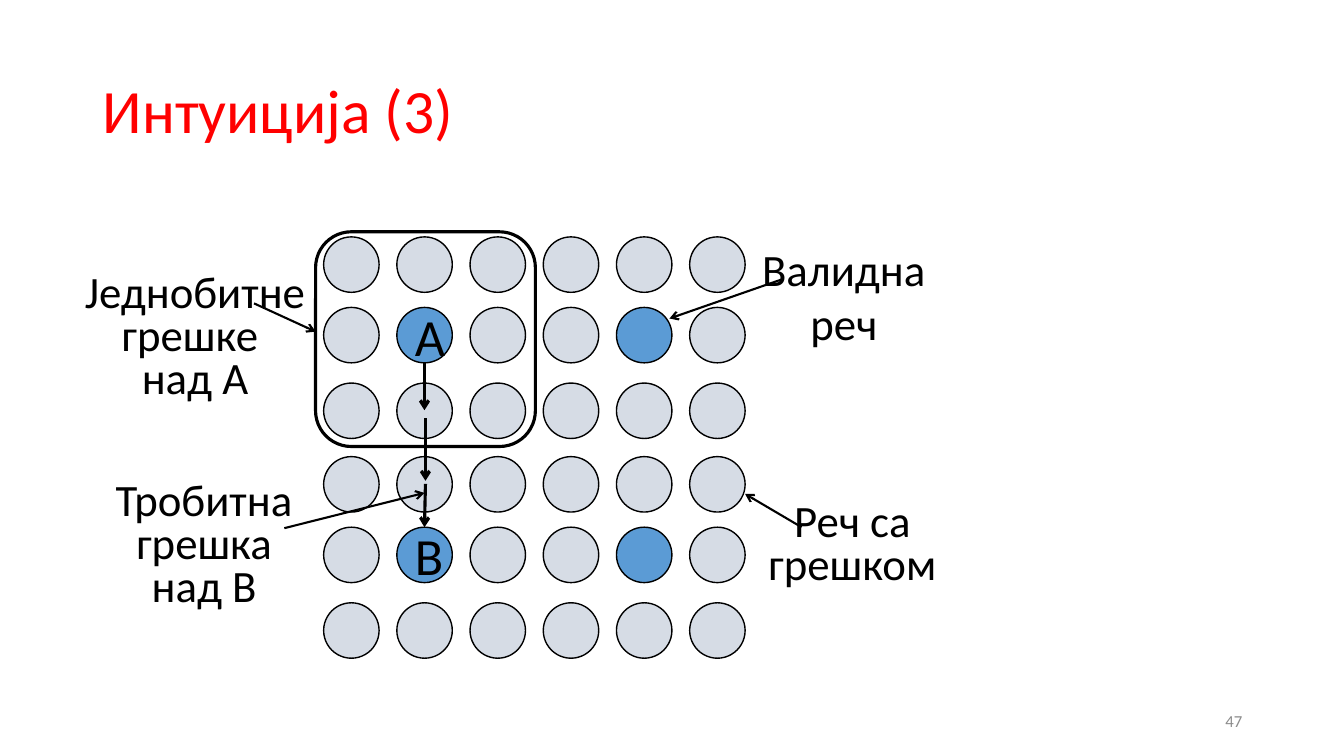
from lxml.etree import SubElement
from pptx import Presentation
from pptx.dml.color import RGBColor
from pptx.enum.shapes import MSO_CONNECTOR, MSO_SHAPE
from pptx.enum.text import MSO_ANCHOR, MSO_AUTO_SIZE, PP_ALIGN
from pptx.oxml.ns import qn
from pptx.util import Inches, Pt

COLORS = {
    "title": "FF0000",
    "ink": "000000",
    "number": "8C8C8C",
    "valid": "5B9BD5",
    "faulty": "D6DCE5",
}
GRID_COLUMNS, GRID_ROWS = 133.3, 75
DOT_SIZE = 5.5
DOT_LEFT, DOT_PITCH, DOT_COLUMNS = 32.1, 7.26, 6
BLOCK_TOP, BLOCK_PITCH, BLOCK_OFFSETS = 23.5, 21.8, (0, 7, 14.5)
VALID_WORDS = {(1, 1): "A", (1, 4): "", (4, 1): "B", (4, 4): ""}


class CodewordSlide:
    font_name = "Calibri"

    def __init__(self, presentation):
        self.column = presentation.slide_width / GRID_COLUMNS
        self.row = presentation.slide_height / GRID_ROWS
        self.slide = presentation.slides.add_slide(presentation.slide_layouts[6])

    def place(self, left, top, width, height):
        return (round(left * self.column), round(top * self.row),
                round(width * self.column), round(height * self.row))

    def color(self, name):
        return RGBColor.from_string(COLORS[name])

    def set_text(self, text_frame, text, size, color, align, spacing=1.0):
        paragraph = text_frame.paragraphs[0]
        paragraph.text = text
        paragraph.alignment = align
        paragraph.line_spacing = spacing
        for run in paragraph.runs:
            run.font.name = self.font_name
            run.font.size = Pt(size)
            run.font.color.rgb = self.color(color)

    def text(self, box, text, size, color, align, spacing=1.0):
        text_frame = self.slide.shapes.add_textbox(*self.place(*box)).text_frame
        text_frame.word_wrap = True
        text_frame.vertical_anchor = MSO_ANCHOR.MIDDLE
        self.set_text(text_frame, text, size, color, align, spacing)

    def label(self, box, text, spacing=0.8):
        text_frame = self.slide.shapes.add_textbox(*self.place(*box)).text_frame
        text_frame.word_wrap = False
        text_frame.auto_size = MSO_AUTO_SIZE.SHAPE_TO_FIT_TEXT
        self.set_text(text_frame, text, 32, "ink", PP_ALIGN.CENTER, spacing)

    def outlined(self, kind, box, line_width, fill=None):
        shape = self.slide.shapes.add_shape(kind, *self.place(*box))
        shape.shadow.inherit = False
        if fill:
            shape.fill.solid()
            shape.fill.fore_color.rgb = self.color(fill)
        else:
            shape.fill.background()
        shape.line.color.rgb = self.color("ink")
        shape.line.width = Pt(line_width)
        return shape

    def dot(self, left, top, fill, letter=""):
        shape = self.outlined(MSO_SHAPE.OVAL, (left, top, DOT_SIZE, DOT_SIZE), 1, fill)
        if letter:
            shape.text_frame.vertical_anchor = MSO_ANCHOR.MIDDLE
            self.set_text(shape.text_frame, letter, 37.3, "ink", PP_ALIGN.CENTER)

    def arrow(self, start, end, line_width):
        connector = self.slide.shapes.add_connector(
            MSO_CONNECTOR.STRAIGHT, *self.place(*start, *end))
        connector.line.color.rgb = self.color("ink")
        connector.line.width = Pt(line_width)
        properties = connector.element.spPr
        SubElement(properties.find(qn("a:ln")), qn("a:tailEnd"), type="arrow")
        SubElement(properties, qn("a:effectLst"))


def main():
    presentation = Presentation()
    presentation.slide_width = Inches(13.33)
    presentation.slide_height = Inches(7.5)
    page = CodewordSlide(presentation)

    page.text((94.2, 69.5, 30, 4), "47", 12, "number", PP_ALIGN.RIGHT)
    page.text((9.2, 4, 115, 14.5), "Интуиција (3)", 44, "title", PP_ALIGN.LEFT, 0.9)

    dot_tops = [BLOCK_TOP + block * BLOCK_PITCH + offset
                for block in range(2) for offset in BLOCK_OFFSETS]
    for row, top in enumerate(dot_tops):
        for column in range(DOT_COLUMNS):
            word = (row, column)
            fill = "valid" if word in VALID_WORDS else "faulty"
            page.dot(DOT_LEFT + column * DOT_PITCH, top, fill, VALID_WORDS.get(word, ""))

    page.outlined(MSO_SHAPE.ROUNDED_RECTANGLE, (31.3, 23, 21.8, 21.3), 2.25)

    page.label((74.5, 23.5, 18.4, 11.8), "Валидна\nреч", 1.0)
    page.label((75.1, 49.4, 18.9, 9.6), "Реч са\nгрешком")
    page.label((7.3, 26.7, 24.1, 13.9), "Једнобитне\nгрешке \nнад A")
    page.label((10.4, 47.3, 19.7, 13.9), "Тробитна\nгрешка\nнад B")

    for start, end in (
        ((79.5, 52.3), (73.9, 49)),
        ((77.6, 27.7), (66.4, 31.6)),
        ((25.2, 30.1), (31.3, 32.9)),
        ((28.2, 52.4), (42.1, 48.9)),
    ):
        page.arrow(start, end, 1.5)

    for start, end in (
        ((42.1, 36), (42.1, 40.7)),
        ((42.2, 41.5), (42.2, 47.7)),
        ((42.2, 48), (42.1, 52.3)),
    ):
        page.arrow(start, end, 2.25)

    presentation.save("out.pptx")


if __name__ == "__main__":
    main()
